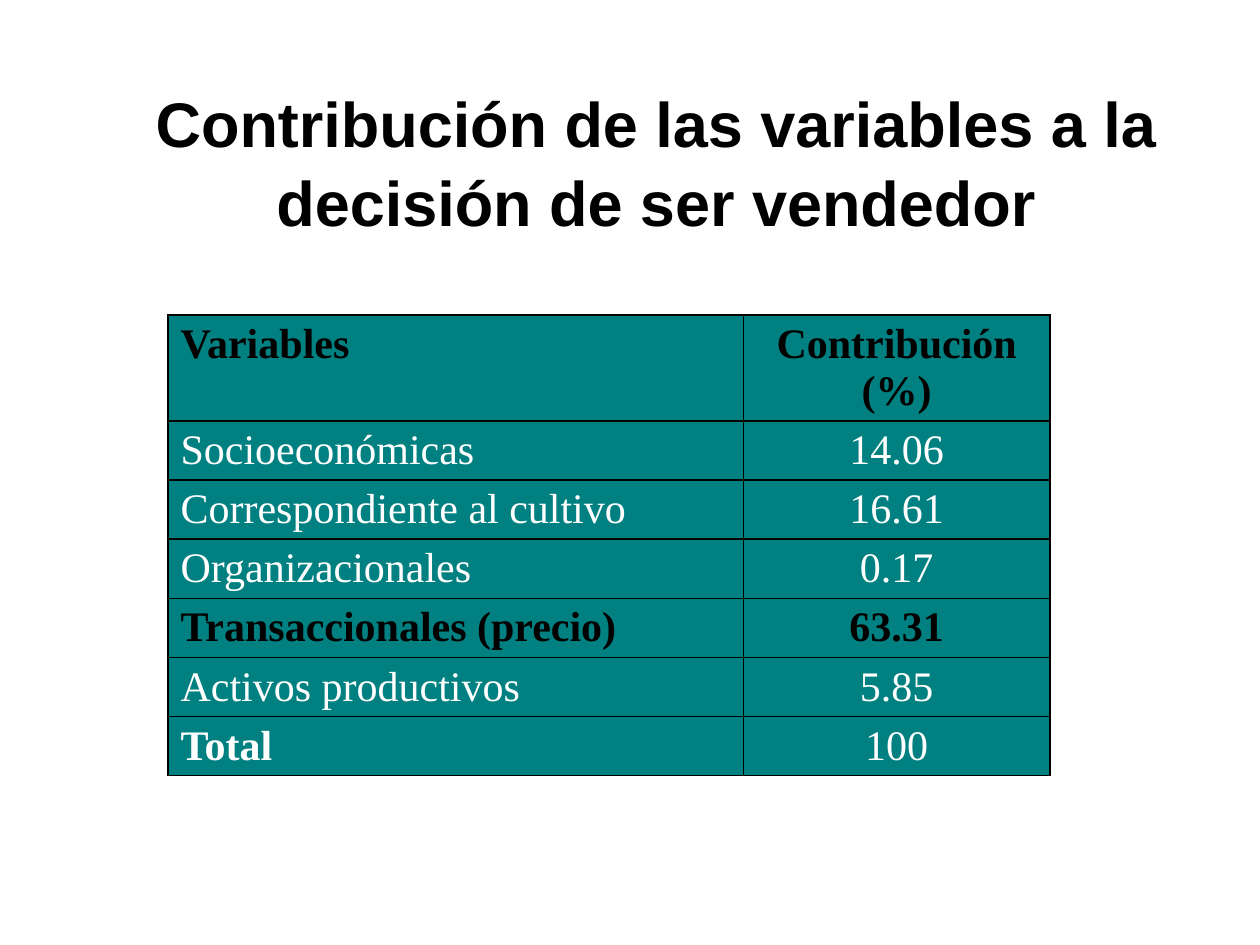
from lxml import etree
from pptx import Presentation
from pptx import util as u
from pptx.dml.color import RGBColor
from pptx.enum import text
from pptx.oxml.ns import qn

GRID_COLUMNS, GRID_ROWS = 120, 90
BLACK, WHITE, TEAL = "000000", "FFFFFF", "008080"

TITLE = "Contribución de las variables a la decisión de ser vendedor"
CONTRIBUTIONS = [
    ("Variables", "Contribución (%)"),
    ("Socioeconómicas", "14.06"),
    ("Correspondiente al cultivo", "16.61"),
    ("Organizacionales", "0.17"),
    ("Transaccionales (precio)", "63.31"),
    ("Activos productivos", "5.85"),
    ("Total", "100"),
]
HIGHLIGHTED = {"Variables", "Transaccionales (precio)"}


def color(value):
    return RGBColor.from_string(value)


class SlideBuilder:
    title_font, table_font = "Arial", "Times New Roman"
    title_size, table_size = 36, 24

    def __init__(self, presentation):
        self.cell_width = presentation.slide_width / GRID_COLUMNS
        self.cell_height = presentation.slide_height / GRID_ROWS
        self.slide = presentation.slides.add_slide(presentation.slide_layouts[0])
        subtitle = self.slide.placeholders[1].element
        subtitle.getparent().remove(subtitle)

    def x(self, columns):
        return u.Emu(round(columns * self.cell_width))

    def y(self, rows):
        return u.Emu(round(rows * self.cell_height))

    def background(self, fill):
        self.slide.background.fill.solid()
        self.slide.background.fill.fore_color.rgb = color(fill)

    def format(self, paragraph, alignment, font, size, ink, bold):
        paragraph.alignment = alignment
        paragraph.font.name = font
        paragraph.font.size = u.Pt(size)
        paragraph.font.color.rgb = color(ink)
        paragraph.font.bold = bold

    def title(self, words, left, top, width, height, space_below):
        shape = self.slide.shapes.title
        shape.left, shape.top = self.x(left), self.y(top)
        shape.width, shape.height = self.x(width), self.y(height)
        frame = shape.text_frame
        frame.text = words
        frame.word_wrap = True
        frame.auto_size = text.MSO_AUTO_SIZE.NONE
        frame.vertical_anchor = text.MSO_ANCHOR.BOTTOM
        frame.margin_bottom = self.y(space_below)
        paragraph = frame.paragraphs[0]
        paragraph.line_spacing = 1.05
        self.format(paragraph, text.PP_ALIGN.CENTER, self.title_font,
                    self.title_size, BLACK, True)

    def borders(self, cell, ink, points):
        properties = cell._tc.get_or_add_tcPr()
        for position, side in enumerate(("a:lnL", "a:lnR", "a:lnT", "a:lnB")):
            line = etree.Element(qn(side), w=str(u.Pt(points)))
            fill = etree.SubElement(line, qn("a:solidFill"))
            etree.SubElement(fill, qn("a:srgbClr"), val=ink)
            properties.insert(position, line)

    def table(self, records, left, top, widths, header_height, row_height):
        heights = [header_height] + [row_height] * (len(records) - 1)
        table = self.slide.shapes.add_table(
            len(records), len(widths), self.x(left), self.y(top),
            self.x(sum(widths)), self.y(sum(heights))).table
        for column, width in zip(table.columns, widths):
            column.width = self.x(width)
        for row, height, record in zip(table.rows, heights, records):
            row.height = self.y(height)
            highlighted = record[0] in HIGHLIGHTED
            for cell, words in zip(row.cells, record):
                cell.text = words
                cell.fill.solid()
                cell.fill.fore_color.rgb = color(TEAL)
                self.borders(cell, BLACK, 1)
                is_label = words == record[0]
                self.format(
                    cell.text_frame.paragraphs[0],
                    text.PP_ALIGN.JUSTIFY if is_label else text.PP_ALIGN.CENTER,
                    self.table_font, self.table_size,
                    BLACK if highlighted else WHITE,
                    highlighted or words == "Total")


def main():
    presentation = Presentation()
    presentation.slide_width, presentation.slide_height = u.Inches(10), u.Inches(7.5)
    builder = SlideBuilder(presentation)
    builder.background(WHITE)
    builder.title(TITLE, left=10, top=17, width=105, height=19, space_below=13.2)
    builder.table(CONTRIBUTIONS, left=16, top=30, widths=(54.8, 29.2),
                  header_height=10.1, row_height=5.63)
    presentation.save("out.pptx")


if __name__ == "__main__":
    main()
